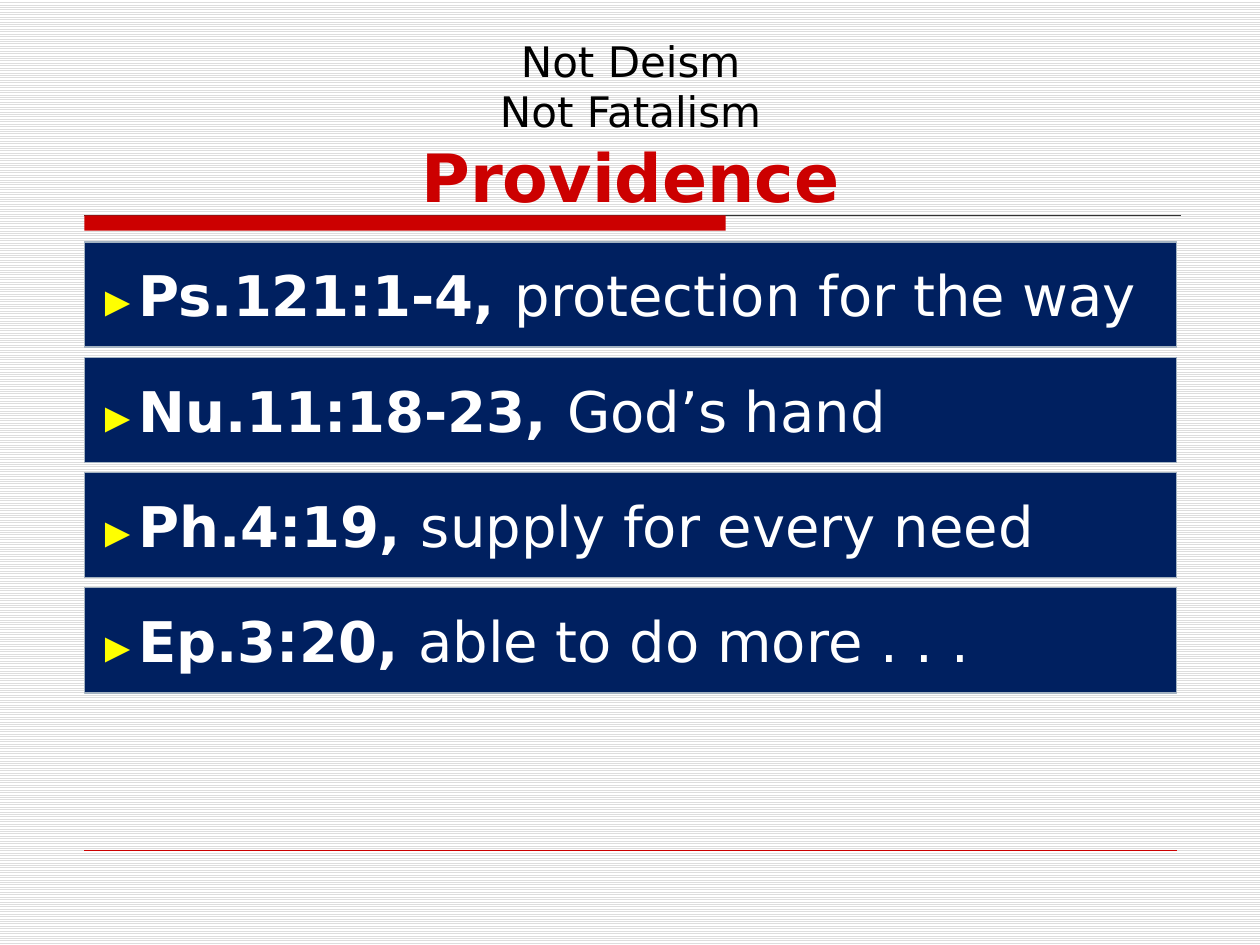
from dataclasses import dataclass

from pptx import Presentation
from pptx.dml.color import RGBColor
from pptx.enum.dml import MSO_PATTERN
from pptx.enum.shapes import MSO_CONNECTOR, MSO_SHAPE
from pptx.enum.text import MSO_ANCHOR, PP_ALIGN
from pptx.oxml.ns import qn
from pptx.util import Inches, Pt


@dataclass(frozen=True)
class Theme:
    red: RGBColor = RGBColor(0xCC, 0x00, 0x00)
    navy: RGBColor = RGBColor(0x00, 0x20, 0x60)
    border: RGBColor = RGBColor(0xA3, 0xB2, 0xC1)
    yellow: RGBColor = RGBColor(0xFF, 0xFF, 0x00)
    white: RGBColor = RGBColor(0xFF, 0xFF, 0xFF)
    black: RGBColor = RGBColor(0x00, 0x00, 0x00)
    rule: RGBColor = RGBColor(0x33, 0x33, 0x33)
    stripe: RGBColor = RGBColor(0xDD, 0xDD, 0xDD)
    body_font: str = "DejaVu Sans"
    marker_font: str = "Arial"
    small: int = 24
    verse: int = 32
    title: int = 38


THEME = Theme()
VERSES = [
    ("Ps.121:1-4, ", "protection for the way"),
    ("Nu.11:18-23, ", "God’s hand"),
    ("Ph.4:19, ", "supply for every need"),
    ("Ep.3:20, ", "able to do more . . ."),
]


def style_span(span, size, color, bold=False, font=THEME.body_font):
    span.font.name = font
    span.font.size = Pt(size)
    span.font.bold = bold
    span.font.color.rgb = color


def add_rule(page, left, top, width, color, weight):
    rule = page.shapes.add_connector(
        MSO_CONNECTOR.STRAIGHT, Inches(left), Inches(top), Inches(left + width), Inches(top))
    rule.line.color.rgb = color
    rule.line.width = Pt(weight)
    rule._element.spPr.append(rule._element.spPr.makeelement(qn("a:effectLst"), {}))


def add_box(page, left, top, width, height, fill):
    box = page.shapes.add_shape(
        MSO_SHAPE.RECTANGLE, Inches(left), Inches(top), Inches(width), Inches(height))
    box.shadow.inherit = False
    box.fill.solid()
    box.fill.fore_color.rgb = fill
    return box


def add_background(page):
    fill = page.background.fill
    fill.patterned()
    fill.pattern = MSO_PATTERN.LIGHT_HORIZONTAL
    fill.fore_color.rgb = THEME.stripe
    fill.back_color.rgb = THEME.white


def add_title_rule(page, left, top, width, height):
    """Draw a thin rule with a thick bar hanging below its left part."""
    add_rule(page, left, top, width, THEME.rule, 0.75)
    bar = add_box(page, left, top, 5.09, height, THEME.red)
    bar.line.fill.background()


def add_title(page, left, top, width, height):
    box = page.shapes.add_textbox(Inches(left), Inches(top), Inches(width), Inches(height))
    frame = box.text_frame
    frame.word_wrap = True
    frame.vertical_anchor = MSO_ANCHOR.MIDDLE
    para = frame.paragraphs[0]
    para.text = "Not Deism\vNot Fatalism\vProvidence"
    para.alignment = PP_ALIGN.CENTER
    *denials, topic = para.runs
    for span in denials:
        style_span(span, THEME.small, THEME.black)
    style_span(topic, THEME.title, THEME.red, bold=True)


def add_verse(page, left, top, width, height, reference, summary):
    box = add_box(page, left, top, width, height, THEME.navy)
    box.line.color.rgb = THEME.border
    box.line.width = Pt(0.75)
    frame = box.text_frame
    frame.word_wrap = False
    frame.vertical_anchor = MSO_ANCHOR.MIDDLE
    para = frame.paragraphs[0]
    para.alignment = PP_ALIGN.LEFT
    marker, citation, note = (para.add_run() for _ in range(3))
    marker.text, citation.text, note.text = "►", reference, summary
    style_span(marker, THEME.small, THEME.yellow, bold=True, font=THEME.marker_font)
    style_span(citation, THEME.verse, THEME.white, bold=True)
    style_span(note, THEME.verse, THEME.white)


def add_verses(page, left, top, width, height):
    """Stack the verse boxes evenly in the given box."""
    gap = 0.08
    box_height = (height - gap * (len(VERSES) - 1)) / len(VERSES)
    for index, (reference, summary) in enumerate(VERSES):
        add_verse(page, left, top + index * (box_height + gap), width, box_height,
                  reference, summary)


def main():
    deck = Presentation()
    deck.slide_width, deck.slide_height = Inches(10), Inches(7.5)
    page = deck.slides.add_slide(deck.slide_layouts[6])
    add_background(page)
    add_title_rule(page, 0.67, 1.71, 8.7, 0.12)
    add_rule(page, 0.67, 6.75, 8.67, THEME.red, 0.25)
    add_title(page, 0.63, 0.33, 8.75, 1.33)
    add_verses(page, 0.67, 1.92, 8.67, 3.58)
    deck.save("out.pptx")


if __name__ == "__main__":
    main()
